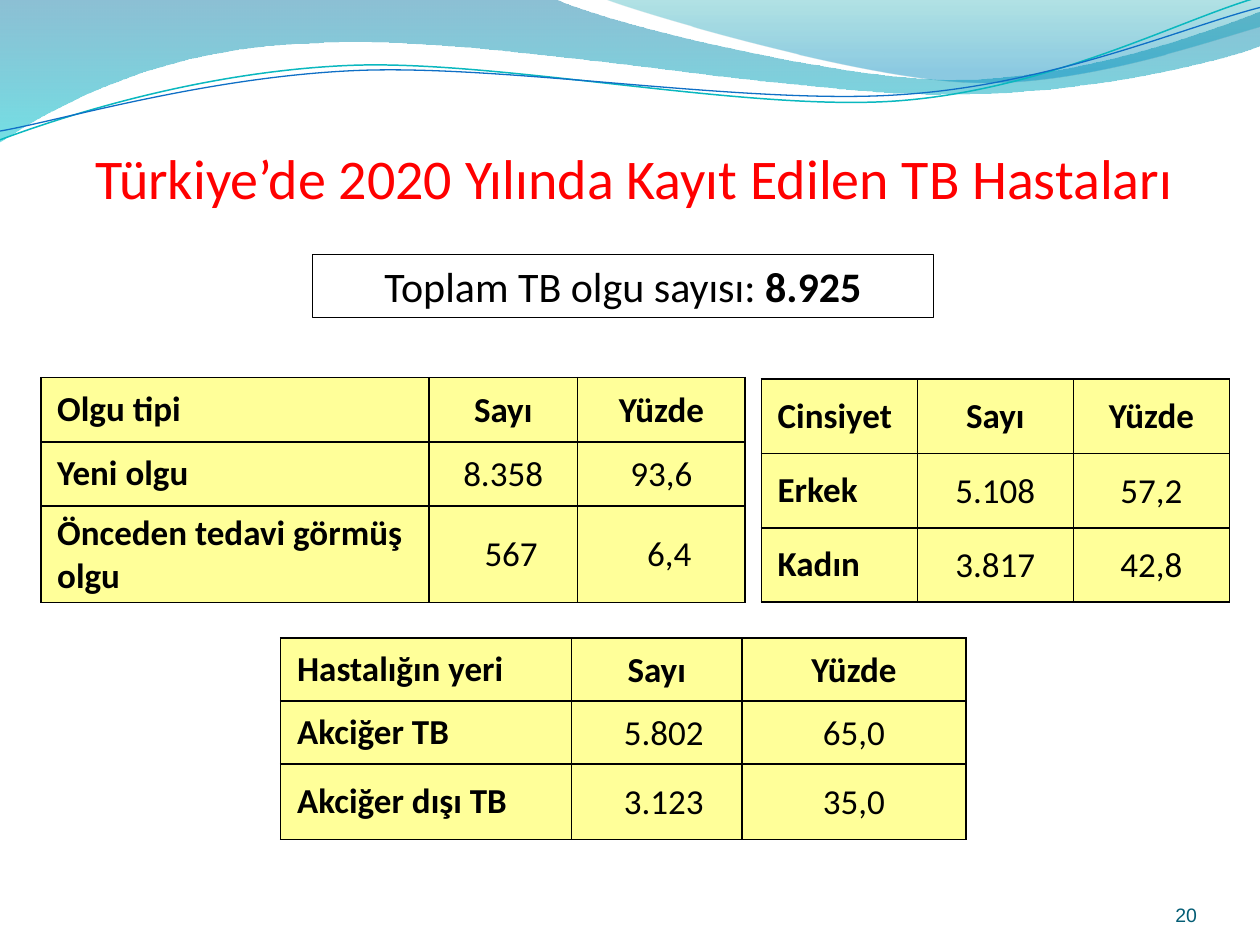
import math

from pptx import Presentation
from pptx.dml.color import RGBColor
from pptx.enum import shapes, text
from pptx.oxml import ns
from pptx.util import Pt
from lxml import etree

BLACK = RGBColor(0, 0, 0)
WHITE = RGBColor(255, 255, 255)
RED = RGBColor(255, 0, 0)
YELLOW = RGBColor(0xFF, 0xFF, 0x99)
NAVY = RGBColor(0x04, 0x5D, 0x75)
TEAL = RGBColor(0x0A, 0xB8, 0xBF)
BLUE = RGBColor(0x0F, 0x6F, 0xC6)
DEEP, CYAN = RGBColor(0, 0x74, 0xA1), RGBColor(0, 0xC6, 0xCF)
SEA, SKY = RGBColor(0, 0xA1, 0xA9), RGBColor(0, 0x8B, 0xBF)

TITLE = "Türkiye’de 2020 Yılında Kayıt Edilen TB Hastaları"
TOTAL = [("Toplam TB olgu sayısı: ", False), ("8.925", True)]
NUMBER = "20"

# Each table: left, top, column widths, row heights, rows, and the
# extra left inset of number cells by (row, column)
TABLES = [
    (435, 216.6, [89.2] * 3, [42.5] * 3,
     [["Cinsiyet", "Sayı", "Yüzde"],
      ["Erkek", "5.108", "57,2"],
      ["Kadın", "3.817", "42,8"]], {}),
    (160.4, 364.6, [166.3, 97.2, 128.2], [36, 36, 43.2],
     [["Hastalığın yeri", "Sayı", "Yüzde"],
      ["Akciğer TB", "5.802", "65,0"],
      ["Akciğer dışı TB", "3.123", "35,0"]], {(1, 1): 8, (2, 1): 8}),
    (23.3, 215.8, [221.8, 85, 95.8], [36.7, 36.7, 55],
     [["Olgu tipi", "Sayı", "Yüzde"],
      ["Yeni olgu", "8.358", "93,6"],
      ["Önceden tedavi görmüş\nolgu", "567", "6,4"]], {(2, 1): 9, (2, 2): 9}),
]

# Outlines in points: a pair is a line end, a six is a Bezier curve
BANDS = [
    ([(0, 0), (316.8, -0.7), (342.7, 12.2, 478, 45.4, 545.8, 45.4),
      (614.2, 45.4, 689.8, 18.7, 720, 6.5), (720.7, 25.9),
      (707.8, 31.7, 626.4, 54.7, 537.1, 54),
      (447.8, 54, 275, 20.2, 185, 24.5),
      (92.9, 25.9, 33.1, 59.8, -0.7, 81.4)],
     [(0, DEEP, 45), (1, CYAN, 55)]),
    ([(344.9, -0.7), (366.5, 7.9, 491, 44.6, 553.7, 46.8),
      (616.3, 49.7, 691.9, 23, 720, 15.1), (720, 0)],
     [(0, SEA, 30), (0.8, SKY, 45)]),
]
WAVES = [
    ([(0, 79.9), (34.6, 67, 113.8, 41, 199.4, 37.4),
      (284.4, 33.8, 427, 64.1, 513.4, 57.6),
      (599.8, 51.1, 675.4, 10.8, 718.6, -1.4)], TEAL, 0.85),
    ([(0, 74.9), (33.8, 69.1, 118.1, 43.9, 203.8, 40.3),
      (290.2, 36.7, 429.8, 60.5, 516.2, 54),
      (601.9, 48.2, 677.5, 15.1, 720, 4.3)], BLUE, 0.75),
]
TILT = 2.7            # waves lean this many degrees to the left
HUB = (359.6, 41.9)   # point the waves turn about

deck = Presentation()
deck.slide_width, deck.slide_height = Pt(720), Pt(540)
slide = deck.slides.add_slide(deck.slide_layouts[6])


def turn(nodes):
    """Level the nodes by turning them about the hub."""
    sin, cos = math.sin(math.radians(TILT)), math.cos(math.radians(TILT))
    out = []
    for node in nodes:
        flat = []
        for x, y in zip(node[::2], node[1::2]):
            dx, dy = x - HUB[0], y - HUB[1]
            flat += [HUB[0] + dx * cos - dy * sin, HUB[1] + dx * sin + dy * cos]
        out.append(tuple(flat))
    return out


def draw(nodes, close):
    """Draw through all nodes, then join each three points to a curve."""
    pts = [(Pt(x), Pt(y)) for n in nodes for x, y in zip(n[::2], n[1::2])]
    pen = slide.shapes.build_freeform(*pts[0])
    pen.add_line_segments(pts[1:], close=close)
    shape = pen.convert_to_shape()
    shape.shadow.inherit = False
    legs = iter(list(shape._element.iter(ns.qn("a:lnTo"))))
    for node in nodes[1:]:
        leg = next(legs)
        if len(node) == 6:
            curve = etree.Element(ns.qn("a:cubicBezTo"))
            leg.addprevious(curve)
            for part in (leg, next(legs), next(legs)):
                curve.append(part[0])
                part.getparent().remove(part)
    return shape


def write(para, words, size, color, bold=False, face="Calibri"):
    run = para.add_run()
    run.text = words
    font = run.font
    font.name, font.size, font.bold = face, Pt(size), bold
    font.color.rgb = color


def inset(part, left, top, right, low):
    part.margin_left, part.margin_top = Pt(left), Pt(top)
    part.margin_right, part.margin_bottom = Pt(right), Pt(low)


def add_box(left, top, width, height, align):
    box = slide.shapes.add_textbox(Pt(left), Pt(top), Pt(width), Pt(height))
    frame = box.text_frame
    frame.word_wrap = True
    frame.paragraphs[0].alignment = align
    return frame


def edge(cell):
    """Give a cell a thin black border, placed before its fill."""
    props = cell._tc.get_or_add_tcPr()
    for i, side in enumerate(("lnL", "lnR", "lnT", "lnB")):
        line = etree.Element(ns.qn("a:" + side), w=str(Pt(1)))
        fill = etree.SubElement(line, ns.qn("a:solidFill"))
        etree.SubElement(fill, ns.qn("a:srgbClr"), val=str(BLACK))
        props.insert(i, line)


# Wavy header
for nodes, stops in BANDS:
    band = draw(nodes, True)
    band.line.fill.background()
    band.fill.gradient()
    band.fill.gradient_angle = 270
    for stop, (pos, color, _) in zip(band.fill.gradient_stops, stops):
        stop.position = pos
        stop.color.rgb = color
    tints = list(band._element.spPr.iter(ns.qn("a:srgbClr")))
    for tint, (_, _, alpha) in zip(tints, stops):
        etree.SubElement(tint, ns.qn("a:alpha"), val=str(alpha * 1000))
for nodes, color, width in WAVES:
    wave = draw(turn(nodes), False)
    wave.rotation = 360 - TILT
    wave.fill.background()
    wave.line.color.rgb = color
    wave.line.width = Pt(width)

# Title and slide number
frame = add_box(22.3, 78.2, 680.4, 46, text.PP_ALIGN.CENTER)
write(frame.paragraphs[0], TITLE, 32, RED)
frame = add_box(624.2, 500.4, 59.8, 28.8, text.PP_ALIGN.RIGHT)
frame.vertical_anchor = text.MSO_ANCHOR.BOTTOM
inset(frame, 0, 0, 0, 0)
write(frame.paragraphs[0], NUMBER, 11.1, NAVY, face="Arial")

# Total box
total = slide.shapes.add_shape(
    shapes.MSO_SHAPE.RECTANGLE, Pt(178.5), Pt(145.4), Pt(355), Pt(36))
total.shadow.inherit = False
total.fill.solid()
total.fill.fore_color.rgb = WHITE
total.line.color.rgb = BLACK
total.line.width = Pt(0.75)
total.text_frame.vertical_anchor = text.MSO_ANCHOR.TOP
para = total.text_frame.paragraphs[0]
para.alignment = text.PP_ALIGN.CENTER
para.space_before = Pt(4.8)
for words, bold in TOTAL:
    write(para, words, 24, BLACK, bold)

# Tables
for left, top, cols, rows, cells, shifts in TABLES:
    grid = slide.shapes.add_table(
        len(rows), len(cols), Pt(left), Pt(top), Pt(sum(cols)), Pt(sum(rows))).table
    for col, width in zip(grid.columns, cols):
        col.width = Pt(width)
    for r, height in enumerate(rows):
        grid.rows[r].height = Pt(height)
        for c, words in enumerate(cells[r]):
            cell = grid.cell(r, c)
            cell.fill.solid()
            cell.fill.fore_color.rgb = YELLOW
            edge(cell)
            cell.vertical_anchor = text.MSO_ANCHOR.MIDDLE
            if c == 0:
                inset(cell, 9.4, 3.6, 9.4, 3.6)
            else:
                inset(cell, 0.7 + shifts.get((r, c), 0), 0.7, 0.7, 0)
            frame = cell.text_frame
            for i, part in enumerate(words.split("\n")):
                para = frame.add_paragraph() if i else frame.paragraphs[0]
                para.alignment = text.PP_ALIGN.CENTER if c else text.PP_ALIGN.LEFT
                write(para, part, 20, BLACK, r == 0 or c == 0)

deck.save("out.pptx")
